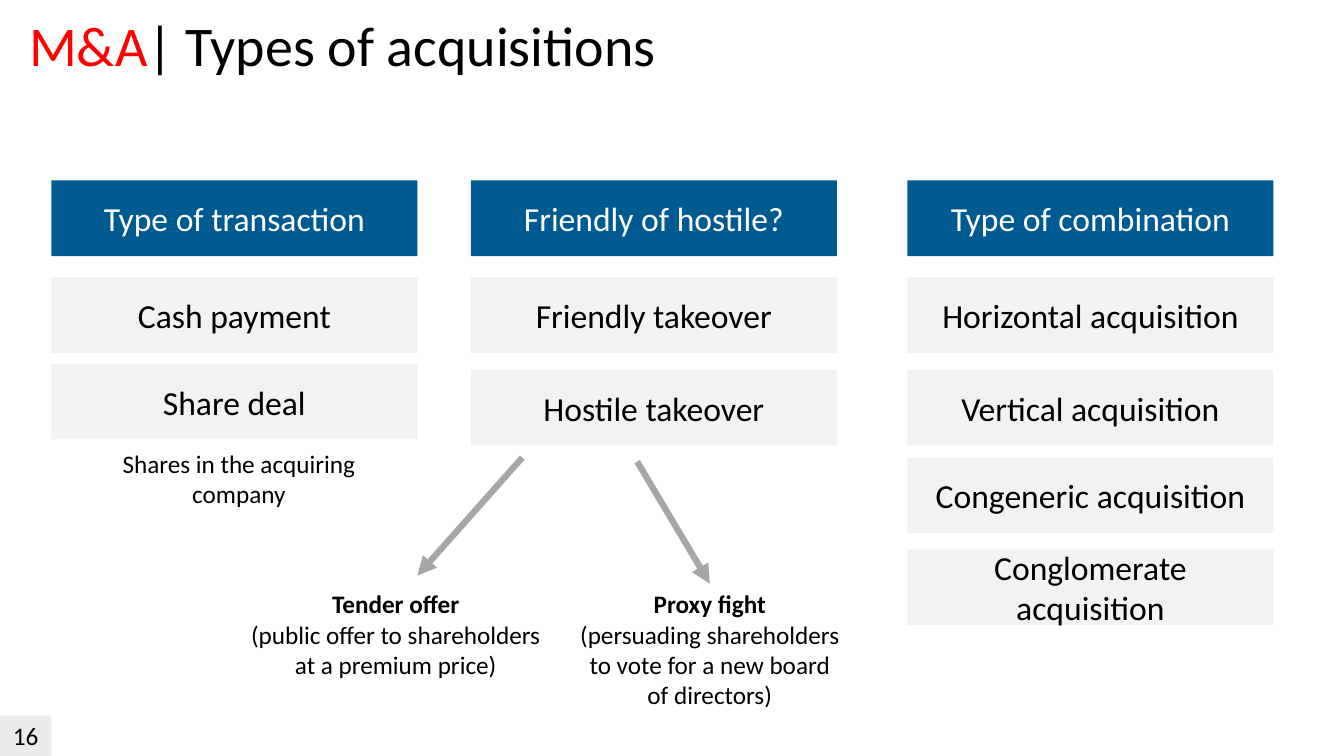
from lxml import etree
from pptx import Presentation
from pptx.dml.color import RGBColor
from pptx.enum.shapes import MSO_CONNECTOR, MSO_SHAPE
from pptx.enum.text import MSO_ANCHOR, PP_ALIGN
from pptx.oxml.ns import qn
from pptx.util import Inches, Pt

RECTANGLE, STRAIGHT = MSO_SHAPE.RECTANGLE, MSO_CONNECTOR.STRAIGHT
TOP, MIDDLE = MSO_ANCHOR.TOP, MSO_ANCHOR.MIDDLE
LEFT, CENTER = PP_ALIGN.LEFT, PP_ALIGN.CENTER

BLUE = RGBColor(0x00, 0x5A, 0x92)
PALE = RGBColor(0xF2, 0xF2, 0xF2)
PAGE_GREY = RGBColor(0xBF, 0xBF, 0xBF)
ARROW_GREY = RGBColor(0xA6, 0xA6, 0xA6)
RED = RGBColor(0xFF, 0x00, 0x00)
BLACK = RGBColor(0x00, 0x00, 0x00)
WHITE = RGBColor(0xFF, 0xFF, 0xFF)

FONT = "Calibri"
SLIDE_WIDTH, SLIDE_HEIGHT = 13.33, 7.5
BOX_WIDTH, BOX_HEIGHT = 3.63, 0.75
HEADER_TOP = 1.79
ROW_TOPS = (2.75, 3.67, 4.54, 5.45)
SHARE_DEAL_TOP = 3.61

# Each column: left edge, header, types, tops of the types
COLUMNS = [
    (0.51, "Type of transaction", ["Cash payment", "Share deal"],
     (ROW_TOPS[0], SHARE_DEAL_TOP)),
    (4.67, "Friendly of hostile?", ["Friendly takeover", "Hostile takeover"],
     ROW_TOPS),
    (9.0, "Type of combination",
     ["Horizontal acquisition", "Vertical acquisition",
      "Congeneric acquisition", "Conglomerate acquisition"], ROW_TOPS),
]

# Each caption: area, bold heading, lines below it
CAPTIONS = [
    ((1.1, 4.4, 2.54, 0.71), "", ["Shares in the acquiring", "company"]),
    ((2.37, 5.79, 3.11, 1.01), "Tender offer",
     ["(public offer to shareholders", "at a premium price)"]),
    ((5.64, 5.79, 2.8, 1.31), "Proxy fight",
     ["(persuading shareholders", "to vote for a new board", "of directors)"]),
]

ARROWS = [((5.18, 4.54), (4.14, 5.71)), ((6.32, 4.58), (7.04, 5.79))]


def write(frame, lines, size, align=CENTER, anchor=TOP, wrap=True):
    """Fill one paragraph; each line is a list of (text, color, bold) runs."""
    frame.word_wrap = wrap
    frame.vertical_anchor = anchor
    paragraph = frame.paragraphs[0]
    paragraph.alignment = align
    for number, line in enumerate(lines):
        if number:
            paragraph.add_line_break()
        for text, color, bold in line:
            run = paragraph.add_run()
            run.text = text
            for name, value in {"name": FONT, "size": Pt(size), "bold": bold}.items():
                setattr(run.font, name, value)
            run.font.color.rgb = color
    return paragraph


def add_box(shapes, area, fill, text, color, size=24, anchor=MIDDLE):
    box = shapes.add_shape(RECTANGLE, *map(Inches, area))
    box.shadow.inherit = False
    box.fill.solid()
    box.fill.fore_color.rgb = fill
    box.line.fill.background()
    write(box.text_frame, [[(text, color, False)]], size, anchor=anchor)
    return box


def add_column(shapes, left, header, types, tops):
    column = shapes.add_group_shape().shapes
    add_box(column, (left, HEADER_TOP, BOX_WIDTH, BOX_HEIGHT), BLUE, header, WHITE)
    for kind, top in zip(types, tops):
        add_box(column, (left, top, BOX_WIDTH, BOX_HEIGHT), PALE, kind, BLACK)


def add_caption(shapes, area, heading, body):
    lines = [[(heading, BLACK, True)]] if heading else []
    lines += [[(text, BLACK, False)] for text in body]
    caption = shapes.add_textbox(*map(Inches, area))
    write(caption.text_frame, lines, 18, wrap=False)


def add_arrow(shapes, start, end):
    arrow = shapes.add_connector(STRAIGHT, *map(Inches, start + end))
    arrow.line.color.rgb = ARROW_GREY
    arrow.line.width = Pt(4.5)
    etree.SubElement(arrow.line._get_or_add_ln(), qn("a:tailEnd"), type="triangle")
    etree.SubElement(arrow._element.spPr, qn("a:effectLst"))


def add_title(shapes):
    title = shapes.add_textbox(*map(Inches, (0.19, 0.13, 11.5, 1.45)))
    runs = [("M&A", RED, False), ("| Types of acquisitions", BLACK, False)]
    write(title.text_frame, [runs], 40, align=LEFT).line_spacing = 0.9


def add_page_number(shapes):
    width, height = 0.51, 0.4
    area = (0, SLIDE_HEIGHT - height, width, height)
    box = add_box(shapes, area, PAGE_GREY, "16", BLACK, size=18, anchor=TOP)
    fill_color = box._element.spPr.find(qn("a:solidFill"))[0]
    etree.SubElement(fill_color, qn("a:alpha"), val="30000")


def main():
    deck = Presentation()
    deck.slide_width, deck.slide_height = Inches(SLIDE_WIDTH), Inches(SLIDE_HEIGHT)
    shapes = deck.slides.add_slide(deck.slide_layouts[6]).shapes
    add_title(shapes)
    add_page_number(shapes)
    for column in COLUMNS:
        add_column(shapes, *column)
    for caption in CAPTIONS:
        add_caption(shapes, *caption)
    for arrow in ARROWS:
        add_arrow(shapes, *arrow)
    deck.save("out.pptx")


if __name__ == "__main__":
    main()
